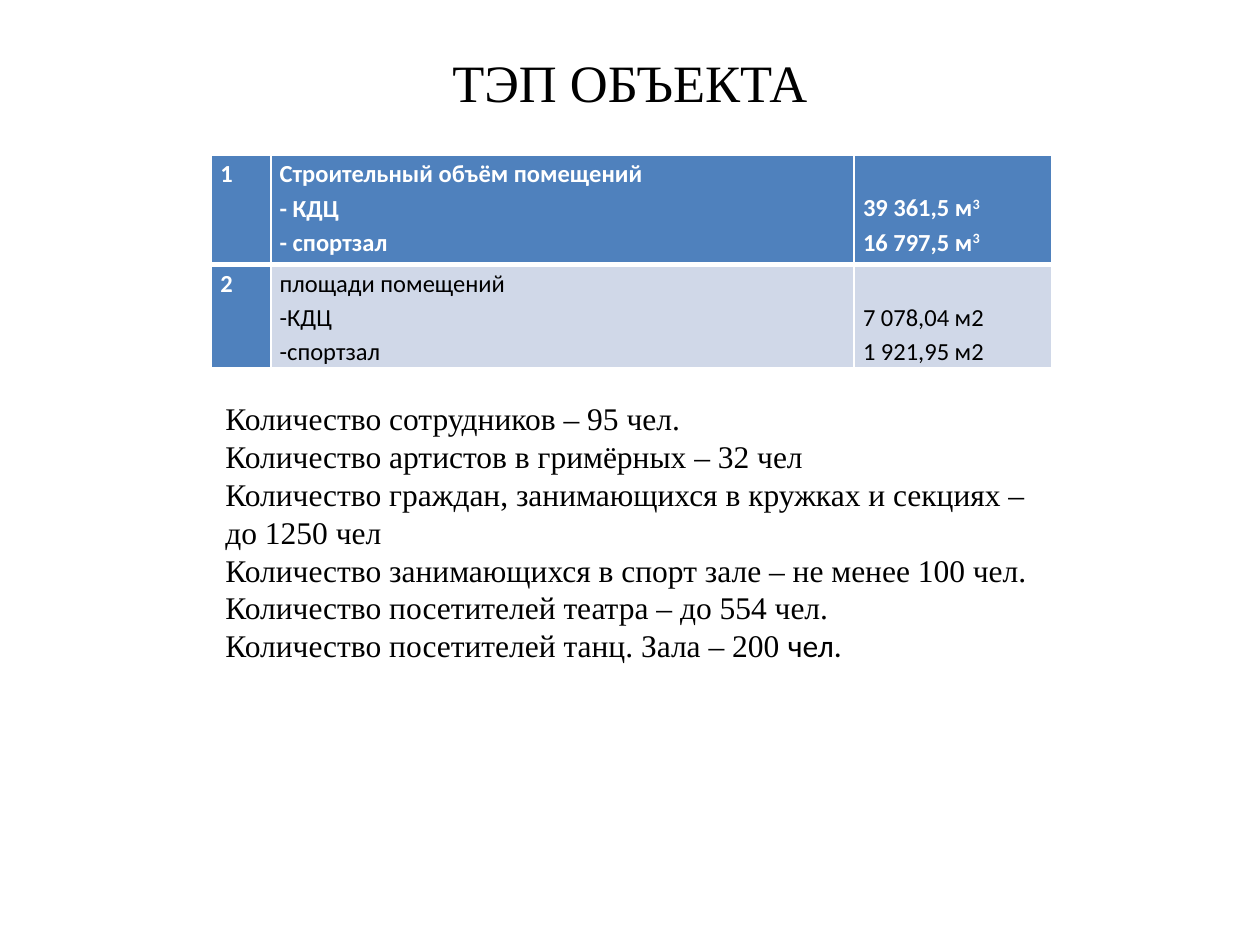
from dataclasses import dataclass

from lxml import etree
from pptx import Presentation
from pptx.dml.color import RGBColor
from pptx.enum.text import MSO_ANCHOR, PP_ALIGN
from pptx.oxml.ns import qn
from pptx.util import Inches, Pt

WHITE = RGBColor(0xFF, 0xFF, 0xFF)
BLACK = RGBColor(0x00, 0x00, 0x00)
BLUE = RGBColor(0x4F, 0x81, 0xBD)
PALE_BLUE = RGBColor(0xD0, 0xD8, 0xE8)

SERIF = "Times New Roman"
SANS = "Calibri"
CENTER = PP_ALIGN.CENTER
MIDDLE = MSO_ANCHOR.MIDDLE

TITLE_ONLY_LAYOUT = 5
LINE_SPACING = 1.15
LINE_HEIGHT = 0.27
COLUMN_WIDTHS = (0.47, 4.63, 1.57)
ROW_HEIGHTS = (0.87, 0.8)


@dataclass(frozen=True)
class Segment:
    text: str
    font: str | None = None
    superscript: bool = False


Line = tuple[Segment, ...]


@dataclass(frozen=True)
class IndicatorRow:
    number: str
    names: tuple[str, ...]
    values: tuple[Line, ...]
    fill: RGBColor
    color: RGBColor
    bold: bool
    bottom_border: float


def plain(*texts: str) -> list[Line]:
    return [(Segment(text),) for text in texts]


def cubic_metres(amount: str) -> Line:
    return Segment(f"{amount} м"), Segment("3", superscript=True)


INDICATORS = (
    IndicatorRow(
        "1",
        ("Строительный объём помещений", "- КДЦ", "- спортзал"),
        (cubic_metres("39 361,5"), cubic_metres("16 797,5")),
        BLUE, WHITE, True, 3,
    ),
    IndicatorRow(
        "2",
        ("площади помещений", "-КДЦ", "-спортзал"),
        tuple(plain("7 078,04 м2", "1 921,95 м2")),
        PALE_BLUE, BLACK, False, 1,
    ),
)

HEADCOUNTS = plain(
    "Количество сотрудников – 95 чел.",
    "Количество артистов в гримёрных – 32 чел",
    "Количество граждан, занимающихся в кружках и секциях – до 1250 чел",
    "Количество занимающихся в спорт зале – не менее 100 чел.",
    "Количество посетителей театра – до 554 чел.",
) + [(Segment("Количество посетителей танц. Зала – 200 "), Segment("чел.", SANS))]


def write_text(text_frame, lines, *, size, font, color=BLACK, bold=False,
               align=None, spacing=None) -> None:
    for index, line in enumerate(lines):
        paragraph = text_frame.paragraphs[0] if index == 0 else text_frame.add_paragraph()
        paragraph.alignment = align
        paragraph.line_spacing = spacing
        for segment in line:
            run = paragraph.add_run()
            run.text = segment.text
            run.font.name = segment.font or font
            run.font.size = Pt(size)
            run.font.bold = bold
            run.font.color.rgb = color
            if segment.superscript:
                run.font._element.set("baseline", "30000")


def set_borders(cell, bottom: float) -> None:
    properties = cell._tc.get_or_add_tcPr()
    widths = {"a:lnL": 1, "a:lnR": 1, "a:lnT": 1, "a:lnB": bottom}
    for position, (tag, width) in enumerate(widths.items()):
        line = etree.Element(qn(tag), w=str(Pt(width)))
        fill = etree.SubElement(line, qn("a:solidFill"))
        etree.SubElement(fill, qn("a:srgbClr"), val=str(WHITE))
        properties.insert(position, line)


def fill_cell(cell, lines, *, fill, color, bold, bottom_border, top=0.0) -> None:
    cell.margin_left = cell.margin_right = Inches(0.07)
    cell.margin_top = Inches(top)
    cell.margin_bottom = 0
    cell.fill.solid()
    cell.fill.fore_color.rgb = fill
    set_borders(cell, bottom_border)
    write_text(cell.text_frame, lines, size=14, font=SANS, color=color,
               bold=bold, spacing=LINE_SPACING)


def add_title(slide) -> None:
    title = slide.shapes.title
    title.left, title.top = Inches(0.5), Inches(0.3)
    title.width, title.height = Inches(9), Inches(0.69)
    title.text_frame.vertical_anchor = MIDDLE
    write_text(title.text_frame, plain("ТЭП ОБЪЕКТА"), size=30, font=SERIF, align=CENTER)


def add_indicator_table(slide) -> None:
    table = slide.shapes.add_table(
        len(INDICATORS), len(COLUMN_WIDTHS), Inches(1.68), Inches(1.23),
        Inches(sum(COLUMN_WIDTHS)), Inches(sum(ROW_HEIGHTS)),
    ).table
    for column, width in zip(table.columns, COLUMN_WIDTHS):
        column.width = Inches(width)
    for row, height, indicator in zip(table.rows, ROW_HEIGHTS, INDICATORS):
        row.height = Inches(height)
        number, names, values = row.cells
        border = indicator.bottom_border
        fill_cell(number, plain(indicator.number), fill=BLUE, color=WHITE,
                  bold=True, bottom_border=border)
        for cell, lines, top in (
            (names, plain(*indicator.names), 0),
            (values, indicator.values, LINE_HEIGHT),
        ):
            fill_cell(cell, lines, fill=indicator.fill, color=indicator.color,
                      bold=indicator.bold, bottom_border=border, top=top)


def add_headcounts(slide) -> None:
    text_box = slide.shapes.add_textbox(Inches(1.69), Inches(3.12), Inches(6.69), Inches(2.22))
    text_box.text_frame.word_wrap = True
    write_text(text_box.text_frame, HEADCOUNTS, size=18, font=SERIF)


def main() -> None:
    presentation = Presentation()
    presentation.slide_width, presentation.slide_height = Inches(10), Inches(7.5)
    slide = presentation.slides.add_slide(presentation.slide_layouts[TITLE_ONLY_LAYOUT])
    add_title(slide)
    add_indicator_table(slide)
    add_headcounts(slide)
    presentation.save("out.pptx")


if __name__ == "__main__":
    main()
